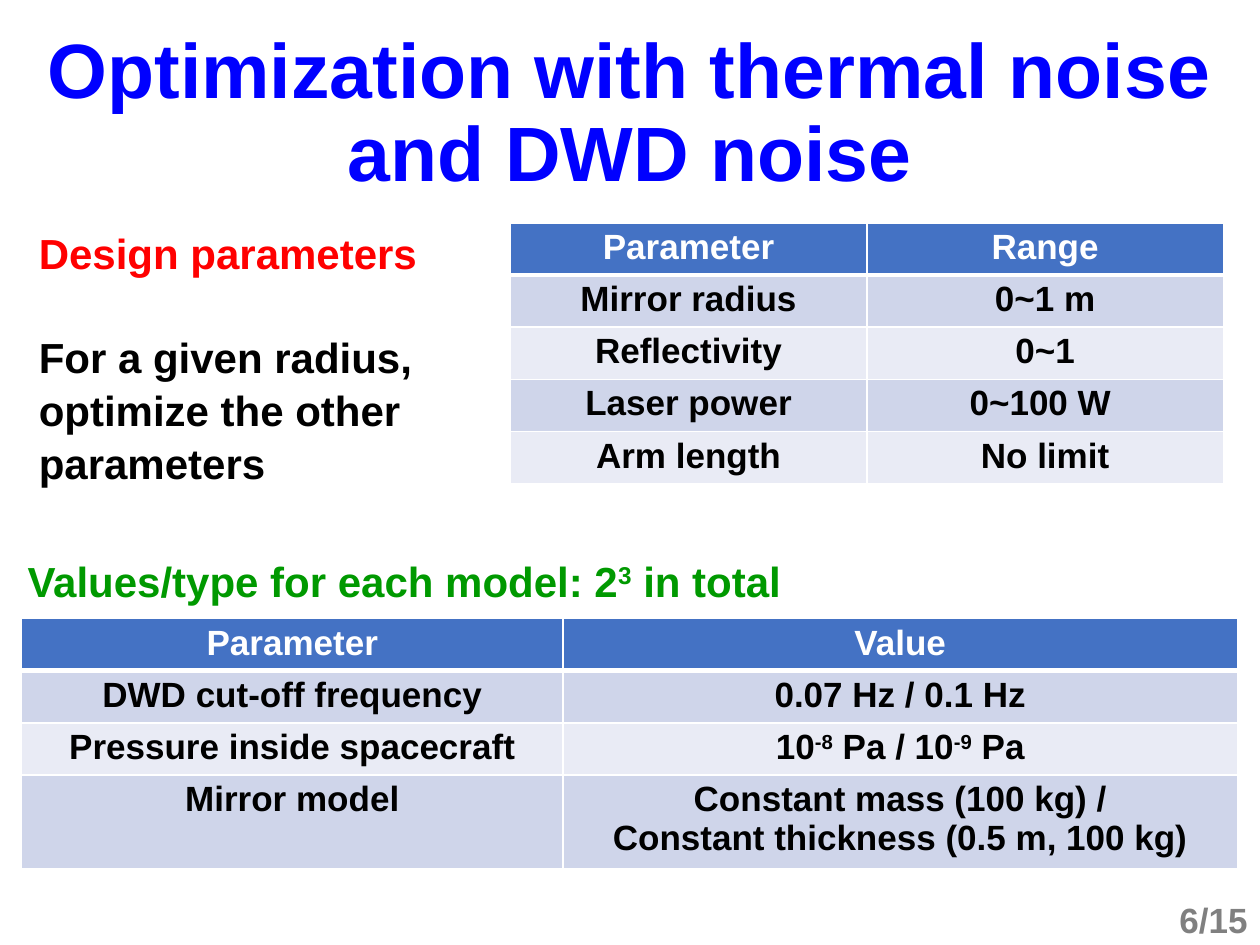
from lxml import etree
from pptx import Presentation, util as u
from pptx.dml.color import RGBColor
from pptx.enum import text
from pptx.oxml import ns

BLUE = RGBColor(0x00, 0x00, 0xFF)
GREEN = RGBColor(0x00, 0x99, 0x00)
RED = RGBColor(0xFF, 0x00, 0x00)
BLACK = RGBColor(0x00, 0x00, 0x00)
GREY = RGBColor(0x80, 0x80, 0x80)
WHITE = RGBColor(0xFF, 0xFF, 0xFF)
HEAD = RGBColor(0x44, 0x72, 0xC4)
BANDS = RGBColor(0xCF, 0xD5, 0xEA), RGBColor(0xE9, 0xEB, 0xF5)
LEFT, MID, RIGHT = text.PP_ALIGN.LEFT, text.PP_ALIGN.CENTER, text.PP_ALIGN.RIGHT
TOP, CENTRE = text.MSO_ANCHOR.TOP, text.MSO_ANCHOR.MIDDLE
COLS, ROWS = 100, 75


class Deck:
    """Hold the style and the current slide, laid out on a 100 by 75 grid."""

    def __init__(self, font="Arial"):
        self.font = font
        self.prs = Presentation()
        self.prs.slide_width, self.prs.slide_height = u.Inches(10), u.Inches(7.5)
        self.slide = self.prs.slides.add_slide(self.prs.slide_layouts[6])

    def wide(self, cols):
        return round(self.prs.slide_width * cols / COLS)

    def high(self, rows):
        return round(self.prs.slide_height * rows / ROWS)

    def place(self, x, y, w, h):
        return self.wide(x), self.high(y), self.wide(w), self.high(h)

    def style(self, frame, words, size, tints, align, pitch=None):
        frame.text = words
        for i, para in enumerate(frame.paragraphs):
            para.alignment = align
            para.line_spacing = pitch
            parts = para.text.split("^")
            para.text = parts[0]
            for part in parts[1:]:
                para.add_run().text = part
            if len(parts) > 1:
                for run in para.runs[1::2]:
                    run._r.get_or_add_rPr().set("baseline", "30000")
            for run in para.runs:
                run.font.name, run.font.bold = self.font, True
                run.font.size = u.Pt(size)
                run.font.color.rgb = tints[min(i, len(tints) - 1)]

    def label(self, box, words, size, *tints, align=LEFT, anchor=TOP, pitch=None):
        frame = self.slide.shapes.add_textbox(*self.place(*box)).text_frame
        frame.word_wrap = True
        frame.vertical_anchor = anchor
        self.style(frame, words, size, tints, align, pitch)
        return frame

    def edge(self, cell, sides):
        props = cell._tc.get_or_add_tcPr()
        for i, (side, points) in enumerate(sides.items()):
            line = etree.Element(ns.qn(f"a:ln{side}"), w=str(u.Pt(points)))
            fill = etree.SubElement(line, ns.qn("a:solidFill"))
            etree.SubElement(fill, ns.qn("a:srgbClr"), val=str(WHITE))
            props.insert(i, line)

    def table(self, x, y, widths, heights, data):
        box = self.place(x, y, sum(widths), sum(heights))
        grid = self.slide.shapes.add_table(len(data), len(widths), *box).table
        for col, w in zip(grid.columns, widths):
            col.width = self.wide(w)
        for r, (row, h) in enumerate(zip(grid.rows, heights)):
            row.height = self.high(h)
            for cell, words in zip(row.cells, data[r]):
                cell.margin_left = cell.margin_right = u.Inches(0.07)
                cell.margin_top = cell.margin_bottom = u.Inches(0.04)
                cell.fill.solid()
                cell.fill.fore_color.rgb = BANDS[(r - 1) % 2] if r else HEAD
                self.style(cell.text_frame, words, 20, [BLACK if r else WHITE], MID)
                self.edge(cell, {"L": 1, "R": 1, "T": 3 if r == 1 else 1,
                                 "B": 1 if r else 3})

    def save(self):
        self.prs.save("out.pptx")


def main():
    deck = Deck()
    deck.label((0, 4, 100, 10.3), "Optimization with thermal noise\vand DWD noise",
               44, BLUE, align=MID, anchor=CENTRE, pitch=0.9)
    deck.label((1.2, 43.4, 67.2, 4.8), "Values/type for each model: 2^3^ in total",
               24, GREEN, pitch=1.05)
    goal = deck.label((2.1, 17.4, 36.6, 21.9), "Design parameters\nFor a given radius,\n"
                      "optimize the other parameters", 24, RED, BLACK, pitch=1.05)
    goal.paragraphs[1].space_before = u.Pt(29)
    deck.table(40.5, 17.7, [28.3] * 2, [4.1] * 5, [
        ("Parameter", "Range"),
        ("Mirror radius", "0~1 m"),
        ("Reflectivity", "0~1"),
        ("Laser power", "0~100 W "),
        ("Arm length", "No limit"),
    ])
    deck.table(1.7, 49.1, [43, 53.5], [4.1] * 3 + [7.4], [
        ("Parameter", "Value"),
        ("DWD cut-off frequency", "0.07 Hz / 0.1 Hz"),
        ("Pressure inside spacecraft", "10^-8^ Pa / 10^-9^ Pa"),
        ("Mirror model", "Constant mass (100 kg) /\nConstant thickness (0.5 m, 100 kg)"),
    ])
    deck.label((77.5, 71, 22.5, 4), "6/15", 20, GREY, align=RIGHT, anchor=CENTRE)
    deck.save()


if __name__ == "__main__":
    main()
